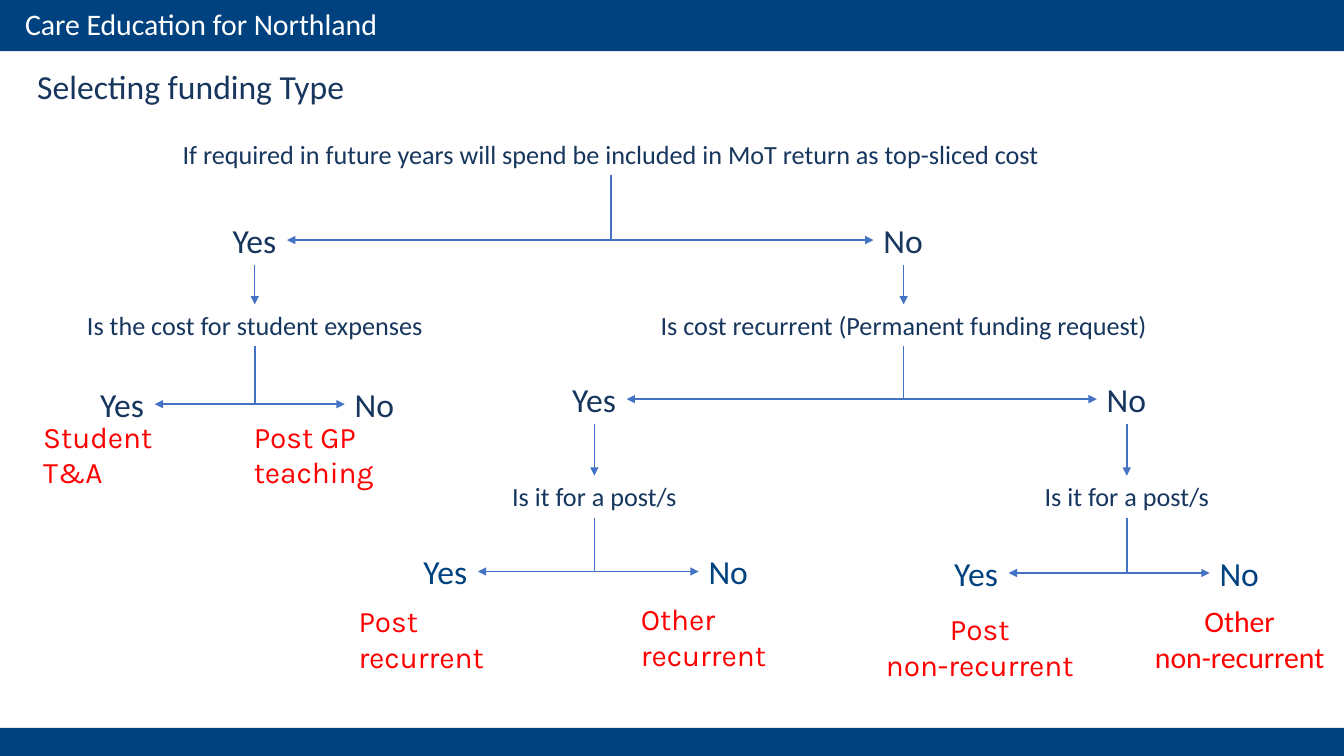
import dataclasses

import lxml.etree
import pptx
import pptx.dml.color
import pptx.enum.shapes
import pptx.enum.text
import pptx.oxml.ns
import pptx.util

Pt = pptx.util.Pt
qn = pptx.oxml.ns.qn
LEFT = pptx.enum.text.PP_ALIGN.LEFT
MID = pptx.enum.text.PP_ALIGN.CENTER
LINK = pptx.enum.shapes.MSO_CONNECTOR


@dataclasses.dataclass(frozen=True)
class Theme:
    band: str = "004280"
    ink: str = "17365E"
    line: str = "4472C4"
    result: str = "FF0000"
    white: str = "FFFFFF"
    font: str = "Calibri"
    accent: str = "Karla"
    large: float = 24
    medium: float = 21.3
    small: float = 18.7


THEME = Theme()


@dataclasses.dataclass
class Result:
    lines: tuple
    left: float
    top: float
    width: float
    align: object = LEFT
    font: str = THEME.accent


@dataclasses.dataclass
class Question:
    """Its answers sit at height row: Yes ends at yes_x, No starts at no_x."""
    text: str
    width: float
    top: float
    row: float
    yes_x: float
    no_x: float
    yes: object
    no: object
    shade: str = THEME.ink


WIDE, HIGH = 960, 540
HEADER = "Care Education for Northland"
TITLE = "Selecting funding Type"
ROOT_X = 436.3
ROW_H, ASK_H, END_H = 36, 30, 59
YES_W, NO_W = 46, 43

TREE = Question(
    "If required in future years will spend be included in MoT return as top-sliced cost",
    816.5, 95, 153.5, 205, 624,
    yes=Question(
        "Is the cost for student expenses", 255.6, 217.4, 270.7, 110.5, 246.2,
        yes=Result(("Student", "T&A"), 23.8, 295.2, 127.4),
        no=Result(("Post GP", "teaching"), 174.2, 295.2, 167)),
    no=Question(
        "Is cost recurrent (Permanent funding request)", 363.6, 217.4, 267.1, 447.6, 783.4,
        yes=Question(
            "Is it for a post/s", 133.2, 339.8, 390.2, 341.3, 499,
            yes=Result(("Post", "recurrent"), 249, 427, 143.3),
            no=Result(("Other", "recurrent"), 450.7, 425.5, 154.8),
            shade=THEME.band),
        no=Question(
            "Is it for a post/s", 133.2, 339.8, 391.3, 720.5, 864,
            yes=Result(("Post", "non-recurrent"), 619.2, 432.7, 161.3, MID),
            no=Result(("Other", "non-recurrent"), 814, 427, 143, MID, THEME.font),
            shade=THEME.band)))


def rgb(code):
    return pptx.dml.color.RGBColor.from_string(code)


def write(shape, text, size, color, font=THEME.font, align=LEFT, wrap=False):
    frame = shape.text_frame
    frame.text = text
    frame.word_wrap = wrap
    frame.auto_size = pptx.enum.text.MSO_AUTO_SIZE.NONE
    frame.vertical_anchor = pptx.enum.text.MSO_ANCHOR.TOP
    frame.margin_left = frame.margin_right = Pt(7.2)
    frame.margin_top = frame.margin_bottom = Pt(3.6)
    for para in frame.paragraphs:
        para.alignment = align
        para.line_spacing = 1.0
        para.font.name = font
        para.font.size = Pt(size)
        para.font.color.rgb = rgb(color)


def add_text(slide, left, top, width, height, *args, **style):
    box = slide.shapes.add_textbox(Pt(left), Pt(top), Pt(width), Pt(height))
    write(box, *args, **style)


def add_band(slide, top, height):
    band = slide.shapes.add_shape(
        pptx.enum.shapes.MSO_SHAPE.RECTANGLE, 0, Pt(top), Pt(WIDE), Pt(height))
    band.shadow.inherit = False
    band.fill.solid()
    band.fill.fore_color.rgb = rgb(THEME.band)
    band.line.fill.background()


def add_arrow(slide, kind, x1, y1, x2, y2):
    link = slide.shapes.add_connector(kind, Pt(x1), Pt(y1), Pt(x2), Pt(y2))
    link.line.color.rgb = rgb(THEME.line)
    link.line.width = Pt(1)
    props = link._element.spPr
    lxml.etree.SubElement(props.find(qn("a:ln")), qn("a:tailEnd"), type="triangle")
    lxml.etree.SubElement(props, qn("a:effectLst"))
    return link


def add_elbow(slide, x1, y1, x2, y2):
    """Arrow that runs down, then sideways: a turned one-bend connector."""
    mid_x, mid_y = (x1 + x2) / 2, (y1 + y2) / 2
    half_w, half_h = (y2 - y1) / 2, abs(x2 - x1) / 2
    turn = 90
    if x2 > x1:
        half_w, turn = -half_w, 270
    link = add_arrow(slide, LINK.ELBOW, mid_x - half_w, mid_y - half_h,
                     mid_x + half_w, mid_y + half_h)
    props = link._element.spPr
    props.find(qn("a:prstGeom")).set("prst", "bentConnector2")
    props.find(qn("a:xfrm")).set("rot", str(turn * 60000))


def add_branch(slide, ask, x):
    add_text(slide, x - ask.width / 2, ask.top, ask.width, ASK_H,
             ask.text, THEME.small, THEME.ink, align=MID)
    answers = (("Yes", ask.yes_x, ask.yes_x - YES_W, YES_W, ask.yes),
               ("No", ask.no_x, ask.no_x, NO_W, ask.no))
    for word, tip, left, width, child in answers:
        add_elbow(slide, x, ask.top + ASK_H, tip, ask.row + ROW_H / 2)
        add_text(slide, left, ask.row, width, ROW_H, word, THEME.large, ask.shade)
        if isinstance(child, Question):
            center = left + width / 2
            add_arrow(slide, LINK.STRAIGHT, center, ask.row + ROW_H, center, child.top)
            add_branch(slide, child, center)
        else:
            add_result(slide, child)


def add_result(slide, end):
    mark = "\n" if end.align == MID else "\v"
    add_text(slide, end.left, end.top, end.width, END_H, mark.join(end.lines),
             THEME.medium, THEME.result, font=end.font, align=end.align, wrap=True)


def main():
    deck = pptx.Presentation()
    deck.slide_width, deck.slide_height = Pt(WIDE), Pt(HIGH)
    slide = deck.slides.add_slide(deck.slide_layouts[5])
    add_band(slide, 520, 20)
    add_band(slide, 0, 36.5)
    add_text(slide, 10.8, 0.7, 407.5, 33, HEADER, THEME.medium, THEME.white)
    title = slide.shapes.title
    title.left, title.top = Pt(19.4), Pt(43.2)
    title.width, title.height = Pt(236.2), Pt(36)
    write(title, TITLE, THEME.large, THEME.ink)
    add_branch(slide, TREE, ROOT_X)
    deck.save("out.pptx")


if __name__ == "__main__":
    main()
